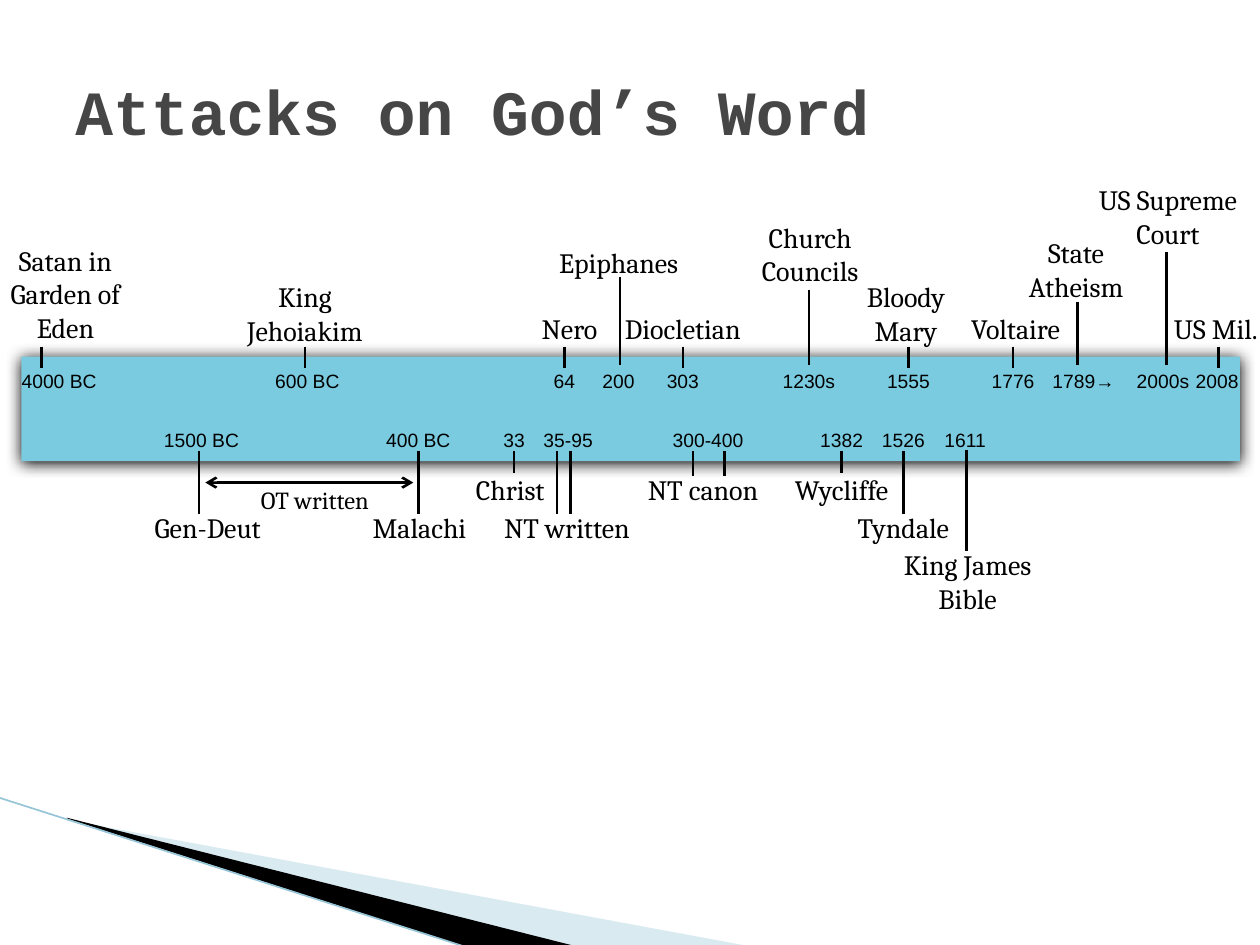
from lxml.etree import SubElement
from pptx import Presentation
from pptx.dml.color import RGBColor
from pptx.enum.shapes import MSO_CONNECTOR, MSO_SHAPE
from pptx.enum.text import MSO_ANCHOR, PP_ALIGN
from pptx.oxml.ns import qn
from pptx.util import Inches, Pt

BLACK = RGBColor(0, 0, 0)
TITLE_GRAY = RGBColor(0x46, 0x46, 0x46)
BAR_BLUE = RGBColor(0x7A, 0xCB, 0xE0)
PALE_BLUE = RGBColor(0xA0, 0xCB, 0xDC)
EDGE_BLUE = RGBColor(0x97, 0xC5, 0xD8)

TITLE = "Attacks on God’s Word"

# Dates: text, centre x, width
ATTACK_DATES = [
    ("4000 BC", 0.47, 0.8), ("600 BC", 2.44, 0.72), ("64", 4.48, 0.37),
    ("200", 4.91, 0.46), ("303", 5.42, 0.46), ("1230s", 6.42, 0.62),
    ("1555", 7.21, 0.55), ("1776", 8.04, 0.55), ("1789→", 8.6, 0.7),
    ("2000s", 9.23, 0.62), ("2008", 9.66, 0.55),
]
SCRIPTURE_DATES = [
    ("1500 BC", 1.6, 0.8), ("400 BC", 3.32, 0.72), ("33", 4.08, 0.37),
    ("35-95", 4.51, 0.6), ("300-400", 5.62, 0.77), ("1382", 6.68, 0.55),
    ("1526", 7.17, 0.55), ("1611", 7.66, 0.55),
]
# Labels: text, centre x, top, width, number of lines
LABELS = [
    ("Satan in Garden of Eden", 0.52, 1.88, 1.33, 3),
    ("King Jehoiakim", 2.42, 2.17, 1.25, 2),
    ("Nero", 4.52, 2.42, 0.67, 1),
    ("Epiphanes", 4.91, 1.9, 1.21, 1),
    ("Diocletian", 5.42, 2.42, 1.17, 1),
    ("Church Councils", 6.43, 1.7, 1.27, 2),
    ("Bloody Mary", 7.19, 2.17, 1.04, 2),
    ("Voltaire", 8.06, 2.42, 0.95, 1),
    ("State Atheism", 8.54, 1.82, 1.19, 2),
    ("US Supreme Court", 9.27, 1.4, 1.75, 2),
    ("US Mil.", 9.65, 2.42, 1.16, 1),
    ("Gen-Deut", 1.65, 4, 1.5, 1),
    ("Malachi", 3.33, 4, 1.5, 1),
    ("Christ", 4.05, 3.7, 1.5, 1),
    ("NT written", 4.5, 4, 1.5, 1),
    ("NT canon", 5.58, 3.7, 1.5, 1),
    ("Wycliffe", 6.68, 3.7, 0.98, 1),
    ("Tyndale", 7.17, 4, 0.97, 1),
    ("King James Bible", 7.68, 4.3, 1.4, 2),
]
# Ticks: (top, bottom) -> x positions
TICKS = {
    (2.75, 2.92): [0.33, 2.42, 4.48, 5.42, 7.21, 8.04, 9.67],
    (2.2, 2.9): [4.92],
    (2.3, 2.9): [6.42],
    (2.4, 2.9): [8.55],
    (2, 2.9): [9.26],
    (3.58, 3.75): [4.08, 6.68],
    (3.58, 3.78): [5.5, 5.75],
    (3.58, 4.08): [1.58, 3.32, 4.42, 4.53, 7.17],
    (3.57, 4.37): [7.67],
}
SWOOSHES = [
    ([(0.55, 6.51), (5.95, 7.51), (4.56, 7.51), (0.55, 6.5)], PALE_BLUE, 40),
    ([(0.53, 6.49), (4.57, 7.51), (3.72, 7.52), (0.54, 6.5)], BLACK, 100),
]

prs = Presentation()
prs.slide_width, prs.slide_height = Inches(10), Inches(7.5)
shapes = prs.slides.add_slide(prs.slide_layouts[6]).shapes


def add_text(text, x, y, w, h, font, size, color=BLACK, bold=False,
             align=PP_ALIGN.CENTER, anchor=MSO_ANCHOR.TOP, wrap=False):
    box = shapes.add_textbox(Inches(x), Inches(y), Inches(w), Inches(h))
    tf = box.text_frame
    tf.text = text
    tf.word_wrap = wrap
    tf.vertical_anchor = anchor
    p = tf.paragraphs[0]
    p.alignment = align
    f = p.runs[0].font
    f.name, f.size, f.bold = font, Pt(size), bold
    f.color.rgb = color


def add_line(x1, y1, x2, y2, color=BLACK, width=1.5, arrows=False):
    line = shapes.add_connector(MSO_CONNECTOR.STRAIGHT, Inches(x1), Inches(y1),
                                Inches(x2), Inches(y2))
    line.line.color.rgb = color
    line.line.width = Pt(width)
    if arrows:
        ln = line.line._get_or_add_ln()
        for end in ("a:headEnd", "a:tailEnd"):
            SubElement(ln, qn(end), type="arrow")
    SubElement(line._element.spPr, qn("a:effectLst"))


def set_alpha(parent, percent):
    color = next(parent.iter(qn("a:srgbClr")))
    SubElement(color, qn("a:alpha"), val=str(percent * 1000))


def add_swoosh(points, color, opacity):
    start, *rest = [(Inches(x), Inches(y)) for x, y in points]
    builder = shapes.build_freeform(*start)
    builder.add_line_segments(rest, close=True)
    sp = builder.convert_to_shape()
    sp.shadow.inherit = False
    sp.fill.solid()
    sp.fill.fore_color.rgb = color
    sp.line.fill.background()
    if opacity < 100:
        set_alpha(sp._element.spPr, opacity)


def add_bar():
    """Timeline bar with a soft black shadow."""
    bar = shapes.add_shape(MSO_SHAPE.RECTANGLE, Inches(0.17), Inches(2.83),
                           Inches(9.67), Inches(0.83))
    bar.fill.solid()
    bar.fill.fore_color.rgb = BAR_BLUE
    bar.line.fill.background()
    bar.shadow.inherit = False
    effects = bar._element.spPr.find(qn("a:effectLst"))
    shadow = SubElement(effects, qn("a:outerShdw"), blurRad=str(Pt(8.5)),
                        dist=str(Pt(1)), dir="5400000", rotWithShape="0")
    SubElement(shadow, qn("a:srgbClr"), val=str(BLACK))


for swoosh in SWOOSHES:
    add_swoosh(*swoosh)
add_line(-0.01, 6.33, 3.71, 7.52, EDGE_BLUE, 0.95)
add_text(TITLE, 0.5, 0.25, 9, 1.25, "Courier New", 36, TITLE_GRAY, bold=True,
         align=PP_ALIGN.LEFT, anchor=MSO_ANCHOR.MIDDLE, wrap=True)

add_bar()
for (top, bottom), xs in TICKS.items():
    for x in xs:
        add_line(x, top, x, bottom)
add_line(1.63, 3.83, 3.28, 3.83, arrows=True)

for top, dates in ((2.88, ATTACK_DATES), (3.35, SCRIPTURE_DATES)):
    for text, center, width in dates:
        add_text(text, center - width / 2, top, width, 0.29, "Arial", 11)
for text, center, top, width, lines in LABELS:
    add_text(text, center - width / 2, top, width, 0.1 + 0.27 * lines,
             "Cambria", 16, wrap=lines > 1)
add_text("OT written", 1.75, 3.8, 1.5, 0.34, "Cambria", 14)

prs.save("out.pptx")
